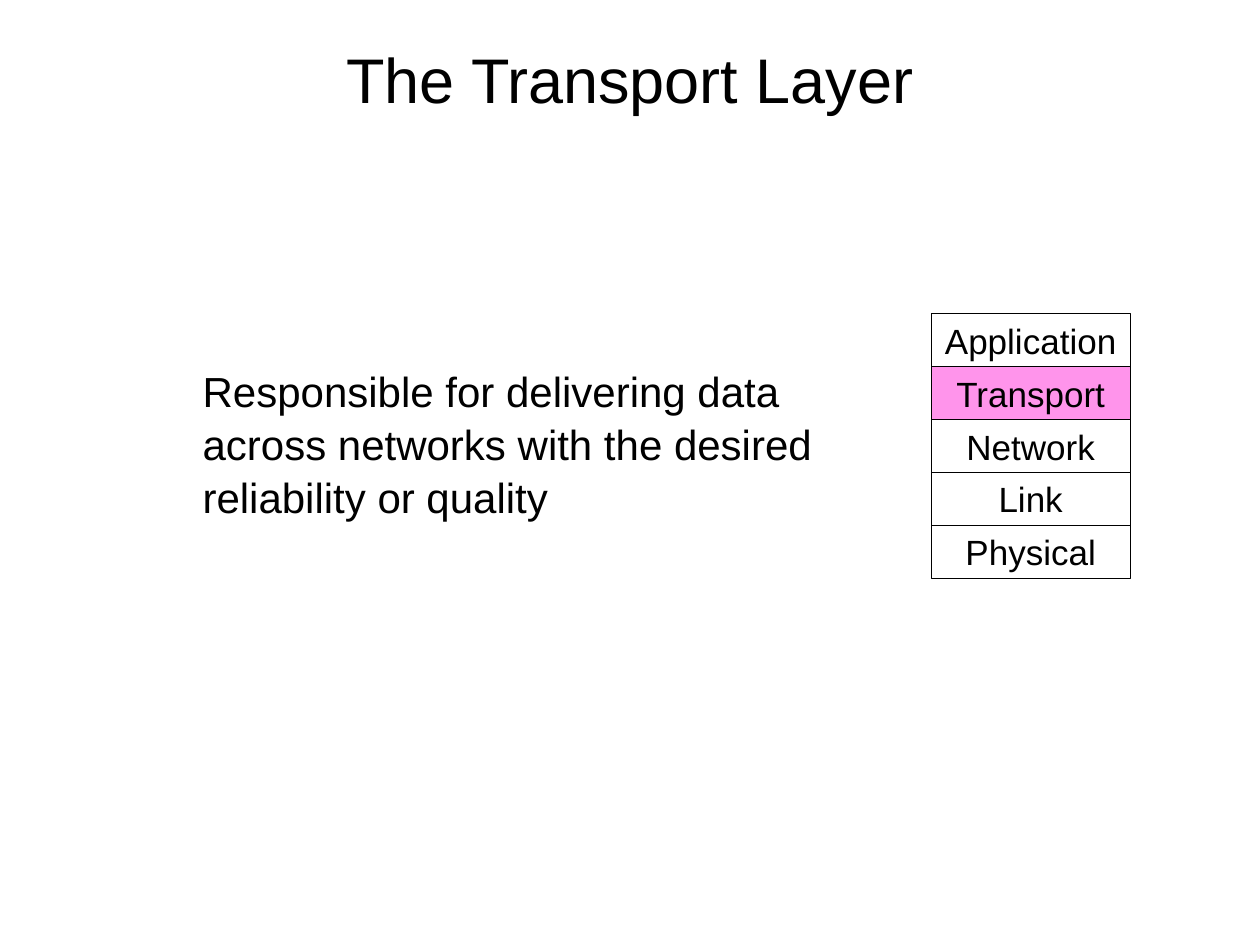
"""Build a slide on the transport layer and its place in the network stack."""
from dataclasses import dataclass

from lxml import etree
from pptx import Presentation
from pptx.dml.color import RGBColor
from pptx.enum.shapes import MSO_SHAPE
from pptx.enum.text import MSO_ANCHOR, PP_ALIGN
from pptx.oxml.ns import qn
from pptx.util import Inches, Pt


@dataclass(frozen=True)
class Theme:
    font: str = "Arial"
    ink: RGBColor = RGBColor(0x00, 0x00, 0x00)
    highlight: RGBColor = RGBColor(0xFF, 0x2B, 0xD8)
    highlight_alpha: str = "50000"
    title_size: int = 36
    body_size: int = 24
    layer_size: int = 20
    outline: float = 0.75


def write(frame, text, size, align, anchor):
    frame.word_wrap = True
    frame.vertical_anchor = anchor
    paragraph = frame.paragraphs[0]
    paragraph.alignment = align
    run = paragraph.add_run()
    run.text = text
    run.font.name = theme.font
    run.font.size = Pt(size)
    run.font.color.rgb = theme.ink
    return paragraph


theme = Theme()
deck = Presentation()
deck.slide_width, deck.slide_height = Inches(10), Inches(7.5)
slide = deck.slides.add_slide(deck.slide_layouts[5])

title = slide.shapes.title
title.left, title.top = 0, 0
title.width, title.height = deck.slide_width, deck.slide_height // 6
write(title.text_frame, "The Transport Layer", theme.title_size,
      PP_ALIGN.CENTER, MSO_ANCHOR.MIDDLE)

duty = slide.shapes.add_textbox(Inches(1.51), Inches(2.83), Inches(5.66), Inches(3.75))
duty_text = write(
    duty.text_frame,
    "Responsible for delivering data across networks with the desired reliability or quality",
    theme.body_size, PP_ALIGN.LEFT, MSO_ANCHOR.TOP)
duty_text.line_spacing = 1.05

layers = ["Application", "Transport", "Network", "Link", "Physical"]
stack_left, stack_top = Inches(7.39), Inches(2.49)
layer_width, layer_height = Inches(1.58), Inches(0.42)

for row, name in enumerate(layers):
    layer = slide.shapes.add_shape(
        MSO_SHAPE.RECTANGLE, stack_left, stack_top + row * layer_height,
        layer_width, layer_height)
    layer.shadow.inherit = False
    layer.line.color.rgb = theme.ink
    layer.line.width = Pt(theme.outline)
    if name == "Transport":
        layer.fill.solid()
        layer.fill.fore_color.rgb = theme.highlight
        tint = layer.fill._xPr.find(qn("a:solidFill")).find(qn("a:srgbClr"))
        etree.SubElement(tint, qn("a:alpha")).set("val", theme.highlight_alpha)
    else:
        layer.fill.background()
    label = layer.text_frame
    label.margin_left = label.margin_right = 0
    write(label, name, theme.layer_size, PP_ALIGN.CENTER, MSO_ANCHOR.MIDDLE)

deck.save("out.pptx")
